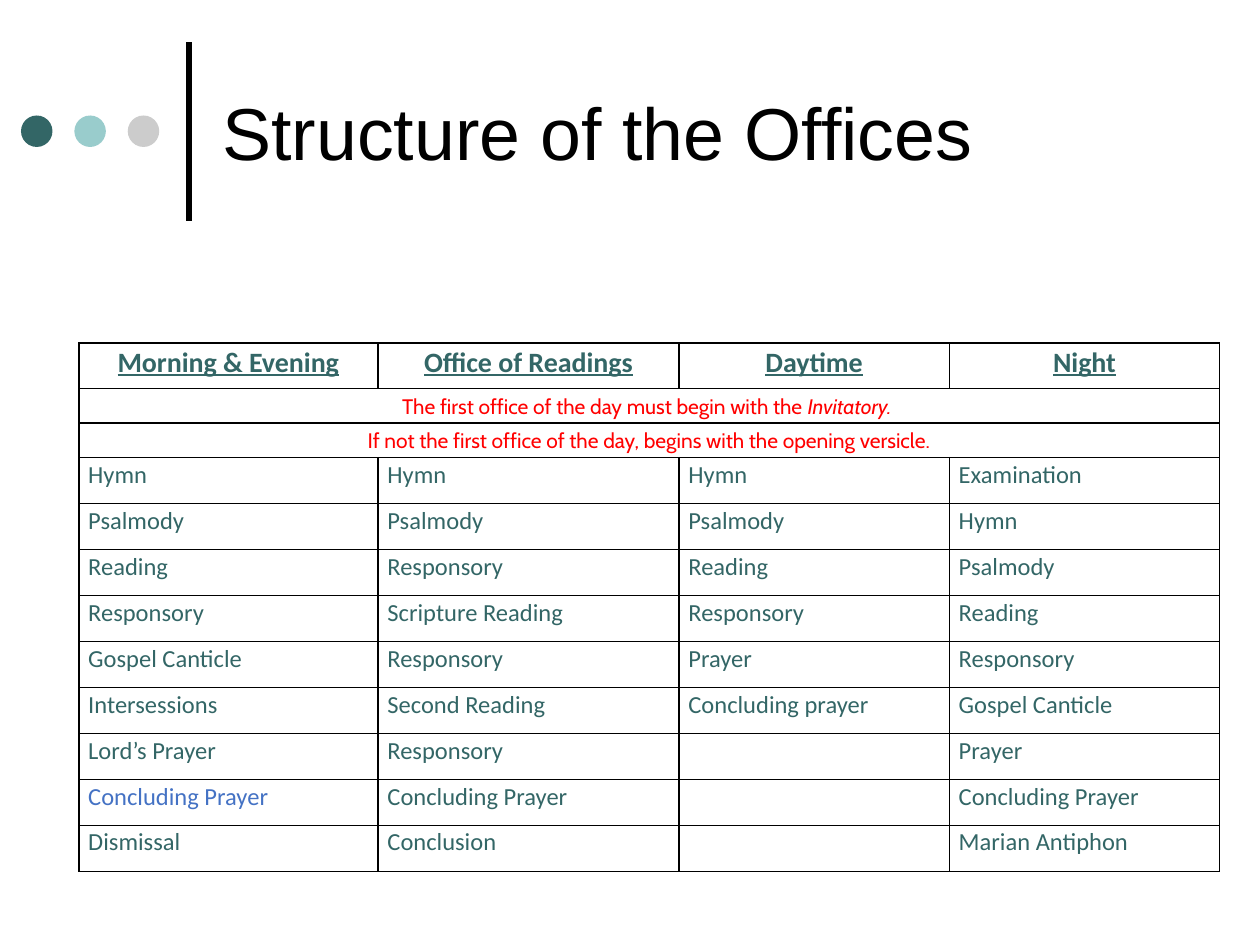
import pptx
import pptx.util
import pptx.dml.color
import pptx.enum.shapes
import pptx.enum.text
import pptx.oxml
import pptx.oxml.ns
import lxml.etree

Pt = pptx.util.Pt
ALIGN = pptx.enum.text.PP_ALIGN
ANCHOR = pptx.enum.text.MSO_ANCHOR
COLORS = {"black": "000000", "teal": "336666", "aqua": "99CCCC",
          "gray": "CCCCCC", "red": "FF0000", "blue": "4472C4"}


def rgb(name):
    return pptx.dml.color.RGBColor.from_string(COLORS[name])


def add_span(para, text, font, size, color):
    span = para.add_run()
    span.text = text
    span.font.name = font
    span.font.size = Pt(size)
    span.font.color.rgb = rgb(color)
    return span


deck = pptx.Presentation()
deck.slide_width, deck.slide_height = Pt(720), Pt(540)
page = deck.slides.add_slide(deck.slide_layouts[6])

# Vertical rule beside the title
rule = page.shapes.add_connector(
    pptx.enum.shapes.MSO_CONNECTOR.STRAIGHT, Pt(108), Pt(126), Pt(108), Pt(24))
rule.line.color.rgb = rgb("black")
rule.line.width = Pt(3)
lxml.etree.SubElement(rule._element.spPr, pptx.oxml.ns.qn("a:effectLst"))

# Three dots
for index, color in enumerate(["teal", "aqua", "gray"]):
    dot = page.shapes.add_shape(pptx.enum.shapes.MSO_SHAPE.OVAL,
                                Pt(12 + 30.5 * index), Pt(66), Pt(18), Pt(18))
    dot.shadow.inherit = False
    dot.fill.solid()
    dot.fill.fore_color.rgb = rgb(color)
    dot.line.fill.background()

# Title
box = page.shapes.add_textbox(Pt(120), Pt(15), Pt(552), Pt(120))
box.text_frame.word_wrap = True
box.text_frame.vertical_anchor = ANCHOR.MIDDLE
add_span(box.text_frame.paragraphs[0], "Structure of the Offices", "Arial", 42, "black")

# Table grid
headers = ["Morning & Evening", "Office of Readings", "Daytime", "Night"]
notes = [["The first office of the day must begin with the", " Invitatory. "],
         ["If not the first office of the day, begins with the opening versicle."]]
offices = [
    ["Hymn", "Psalmody", "Reading", "Responsory", "Gospel Canticle",
     "Intersessions", "Lord’s Prayer", "Concluding Prayer", "Dismissal"],
    ["Hymn", "Psalmody", "Responsory", "Scripture Reading", "Responsory",
     "Second Reading", "Responsory", "Concluding Prayer", "Conclusion"],
    ["Hymn", "Psalmody", "Reading", "Responsory", "Prayer", "Concluding prayer"],
    ["Examination", "Hymn", "Psalmody", "Reading", "Responsory",
     "Gospel Canticle", "Prayer", "Concluding Prayer", "Marian Antiphon"],
]
widths = [171, 172, 154.5, 154.5]
heights = [26] + [19.8] * 2 + [26.3] * 9
table = page.shapes.add_table(len(heights), len(widths), Pt(45), Pt(196),
                              Pt(sum(widths)), Pt(sum(heights))).table
table.first_row = table.horz_banding = False
for column, width in zip(table.columns, widths):
    column.width = Pt(width)
for row, height in zip(table.rows, heights):
    row.height = Pt(height)

# Cell margins, borders and paragraph format
for cell in table.iter_cells():
    cell.margin_left = cell.margin_right = Pt(5.4)
    cell.margin_top = cell.margin_bottom = 0
    para = cell.text_frame.paragraphs[0]
    para.line_spacing = 1.07
    para.space_after = Pt(8)
    properties = cell._tc.get_or_add_tcPr()
    for side in ["lnL", "lnR", "lnT", "lnB"]:
        properties.append(pptx.oxml.parse_xml(
            f'<a:{side} {pptx.oxml.ns.nsdecls("a")} w="12700"><a:solidFill>'
            f'<a:srgbClr val="{COLORS["black"]}"/></a:solidFill></a:{side}>'))
    cell.fill.background()

# Header row
for column, text in enumerate(headers):
    para = table.cell(0, column).text_frame.paragraphs[0]
    para.alignment = ALIGN.CENTER
    span = add_span(para, text, "Calibri", 16, "teal")
    span.font.bold = span.font.underline = True

# Notes across all columns, second part in italics
for row, parts in enumerate(notes, 1):
    cell = table.cell(row, 0)
    cell.merge(table.cell(row, len(widths) - 1))
    cell.vertical_anchor = ANCHOR.MIDDLE
    para = cell.text_frame.paragraphs[0]
    para.alignment = ALIGN.CENTER
    for index, text in enumerate(parts):
        add_span(para, text, "Cabin", 12, "red").font.italic = index == 1

# Parts of each office
for column, parts in enumerate(offices):
    for row, text in enumerate(parts, 3):
        color = "blue" if (column, text) == (0, "Concluding Prayer") else "teal"
        add_span(table.cell(row, column).text_frame.paragraphs[0],
                 text, "Calibri", 14, color)

deck.save("out.pptx")
